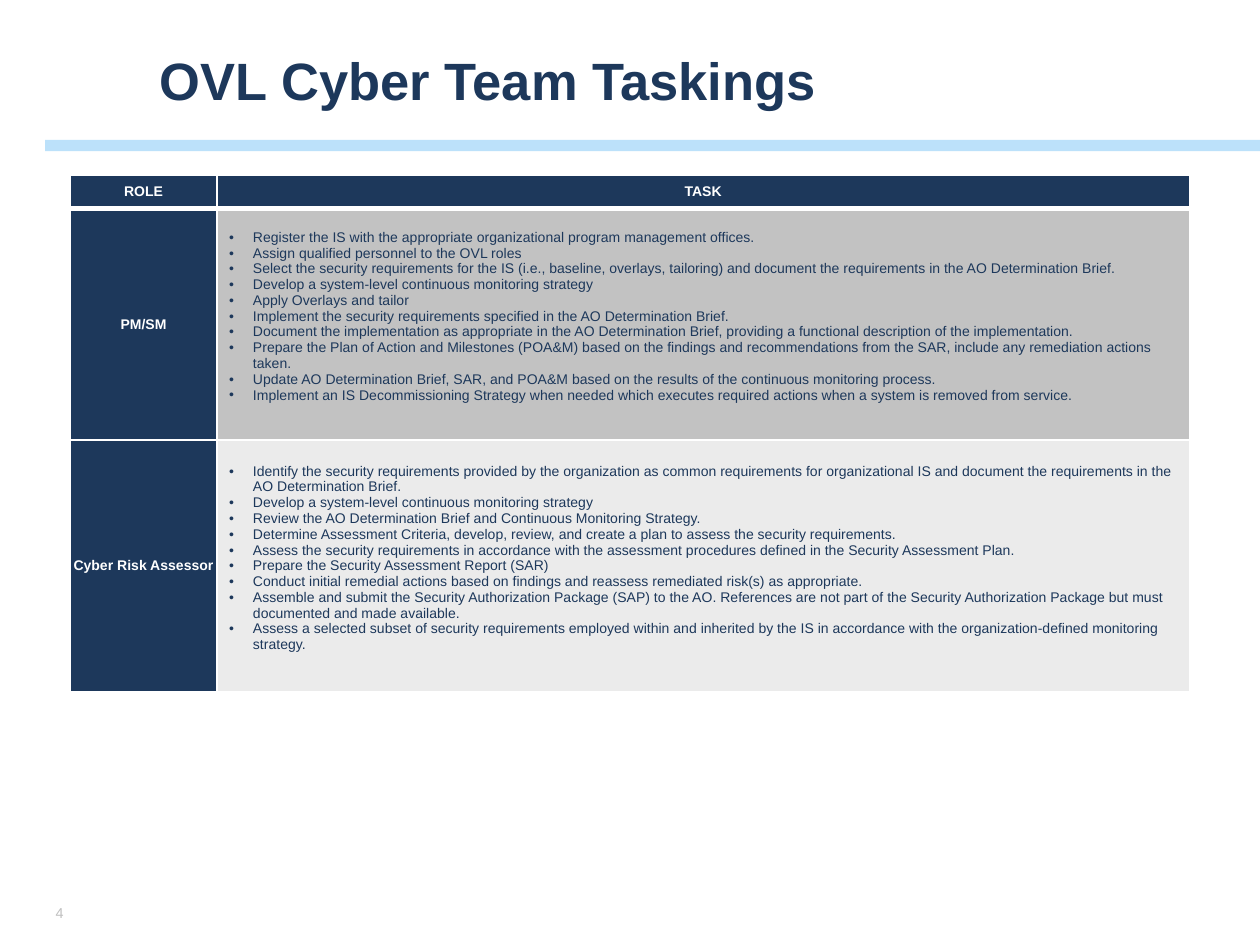
from dataclasses import dataclass

from lxml import etree
from pptx import Presentation
from pptx.dml.color import RGBColor
from pptx.enum.shapes import MSO_SHAPE
from pptx.enum.text import MSO_ANCHOR, MSO_AUTO_SIZE, PP_ALIGN
from pptx.oxml.ns import qn
from pptx.util import Cm, Pt

RECTANGLE = MSO_SHAPE.RECTANGLE
MIDDLE = MSO_ANCHOR.MIDDLE
NO_AUTOFIT = MSO_AUTO_SIZE.NONE
LEFT, CENTER = PP_ALIGN.LEFT, PP_ALIGN.CENTER
TITLE_ONLY = 5


@dataclass(frozen=True)
class Theme:
    font: str = "Arial"
    navy: str = "1D385B"
    white: str = "FFFFFF"
    sky: str = "65BAF5"
    sky_opacity: int = 43
    number_grey: str = "BFBFBF"
    title_size: float = 30
    table_size: float = 8
    number_size: float = 8.2
    thin_border: float = 1
    thick_border: float = 3


@dataclass(frozen=True)
class Role:
    name: str
    height: float
    fill: str
    tasks: tuple[str, ...]


THEME = Theme()
HEADERS = ("ROLE", "TASK")
HEADER_HEIGHT = 0.66
COLUMN_WIDTHS = (2.95, 19.61)
ROLES = (
    Role("PM/SM", 4.67, "C2C2C2", (
        "Register the IS with the appropriate organizational program management offices.",
        "Assign qualified personnel to the OVL roles",
        "Select the security requirements for the IS (i.e., baseline, overlays, tailoring) "
        "and document the requirements in the AO Determination Brief.",
        "Develop a system-level continuous monitoring strategy",
        "Apply Overlays and tailor",
        "Implement the security requirements specified in the AO Determination Brief.",
        "Document the implementation as appropriate in the AO Determination Brief, "
        "providing a functional description of the implementation.",
        "Prepare the Plan of Action and Milestones (POA&M) based on the findings and "
        "recommendations from the SAR, include any remediation actions taken.",
        "Update AO Determination Brief, SAR, and POA&M based on the results of the "
        "continuous monitoring process.",
        "Implement an IS Decommissioning Strategy when needed which executes required "
        "actions when a system is removed from service.",
    )),
    Role("Cyber Risk Assessor", 5.08, "EBEBEB", (
        "Identify the security requirements provided by the organization as common "
        "requirements for organizational IS and document the requirements in the "
        "AO Determination Brief.",
        "Develop a system-level continuous monitoring strategy",
        "Review the AO Determination Brief and Continuous Monitoring Strategy.",
        "Determine Assessment Criteria, develop, review, and create a plan to assess "
        "the security requirements.",
        "Assess the security requirements in accordance with the assessment procedures "
        "defined in the Security Assessment Plan.",
        "Prepare the Security Assessment Report (SAR)",
        "Conduct initial remedial actions based on findings and reassess remediated "
        "risk(s) as appropriate.",
        "Assemble and submit the Security Authorization Package (SAP) to the AO. "
        "References are not part of the Security Authorization Package but must "
        "documented and made available.",
        "Assess a selected subset of security requirements employed within and inherited "
        "by the IS in accordance with the organization-defined monitoring strategy.",
    )),
)


def style_paragraph(para, size: float, color: str, bold: bool = False) -> None:
    para.font.name = THEME.font
    para.font.size = Pt(size)
    para.font.bold = bold
    para.font.color.rgb = RGBColor.from_string(color)


def add_bullet(para) -> None:
    properties = para._p.get_or_add_pPr()
    properties.set("marL", str(Cm(0.73)))
    properties.set("indent", str(Cm(-0.48)))
    etree.SubElement(properties, qn("a:buFont"), typeface=THEME.font)
    etree.SubElement(properties, qn("a:buChar"), char="•")


def add_borders(cell, top: float, bottom: float) -> None:
    properties = cell._tc.get_or_add_tcPr()
    thin = THEME.thin_border
    for side, width in (("L", thin), ("R", thin), ("T", top), ("B", bottom)):
        line = etree.SubElement(properties, qn(f"a:ln{side}"), w=str(Pt(width)))
        fill = etree.SubElement(line, qn("a:solidFill"))
        etree.SubElement(fill, qn("a:srgbClr"), val=THEME.white)


def format_cell(cell, fill: str, top: float, bottom: float) -> None:
    add_borders(cell, top, bottom)
    cell.fill.solid()
    cell.fill.fore_color.rgb = RGBColor.from_string(fill)
    cell.vertical_anchor = MIDDLE
    cell.margin_left = cell.margin_right = cell.margin_top = cell.margin_bottom = 0


def write_label(cell, text: str) -> None:
    cell.text = text
    para = cell.text_frame.paragraphs[0]
    para.alignment = CENTER
    style_paragraph(para, THEME.table_size, THEME.white, bold=True)


def write_tasks(cell, tasks: tuple[str, ...]) -> None:
    """Fill the cell with bullets, resting half a line above its middle."""
    cell.margin_bottom = Cm(0.32)
    cell.text = "\n".join(tasks)
    for para in cell.text_frame.paragraphs:
        add_bullet(para)
        style_paragraph(para, THEME.table_size, THEME.navy)


def add_title(page, text: str) -> None:
    title = page.shapes.title
    title.left, title.top, title.width, title.height = Cm(2.97), Cm(0.84), Cm(21.87), Cm(1.7)
    frame = title.text_frame
    frame.text = text
    frame.auto_size = NO_AUTOFIT
    frame.vertical_anchor = MIDDLE
    para = frame.paragraphs[0]
    para.alignment = LEFT
    para.line_spacing = 0.9
    style_paragraph(para, THEME.title_size, THEME.navy, bold=True)


def add_title_rule(page) -> None:
    rule = page.shapes.add_shape(RECTANGLE, Cm(0.91), Cm(2.82), Cm(24.49), Cm(0.23))
    rule.shadow.inherit = False
    rule.line.fill.background()
    rule.fill.solid()
    rule.fill.fore_color.rgb = RGBColor.from_string(THEME.sky)
    color = rule._element.spPr.find(".//" + qn("a:srgbClr"))
    etree.SubElement(color, qn("a:alpha"), val=str(THEME.sky_opacity * 1000))


def add_page_number(page, number: int) -> None:
    box = page.shapes.add_textbox(Cm(0.94), Cm(18.08), Cm(0.81), Cm(0.66))
    frame = box.text_frame
    frame.word_wrap = True
    frame.vertical_anchor = MIDDLE
    frame.margin_left = frame.margin_right = Cm(0.18)
    frame.margin_top = frame.margin_bottom = Cm(0.1)
    frame.text = str(number)
    style_paragraph(frame.paragraphs[0], THEME.number_size, THEME.number_grey)


def add_role_table(page) -> None:
    heights = (HEADER_HEIGHT, *(role.height for role in ROLES))
    table = page.shapes.add_table(
        len(heights), len(COLUMN_WIDTHS), Cm(1.42), Cm(3.54),
        Cm(sum(COLUMN_WIDTHS)), Cm(sum(heights)),
    ).table
    table.first_row = table.horz_banding = False
    for column, width in zip(table.columns, COLUMN_WIDTHS):
        column.width = Cm(width)
    for row, height in zip(table.rows, heights):
        row.height = Cm(height)

    thin, thick = THEME.thin_border, THEME.thick_border
    for index, header in enumerate(HEADERS):
        cell = table.cell(0, index)
        format_cell(cell, THEME.navy, thin, thick)
        write_label(cell, header)
    for index, role in enumerate(ROLES, start=1):
        top = thick if index == 1 else thin
        name_cell, task_cell = table.cell(index, 0), table.cell(index, 1)
        format_cell(name_cell, THEME.navy, top, thin)
        write_label(name_cell, role.name)
        format_cell(task_cell, role.fill, top, thin)
        write_tasks(task_cell, role.tasks)


def main() -> None:
    deck = Presentation()
    deck.slide_width, deck.slide_height = Cm(25.4), Cm(19.05)
    page = deck.slides.add_slide(deck.slide_layouts[TITLE_ONLY])
    add_title_rule(page)
    add_page_number(page, 4)
    add_title(page, "OVL Cyber Team Taskings")
    add_role_table(page)
    deck.save("out.pptx")


if __name__ == "__main__":
    main()
